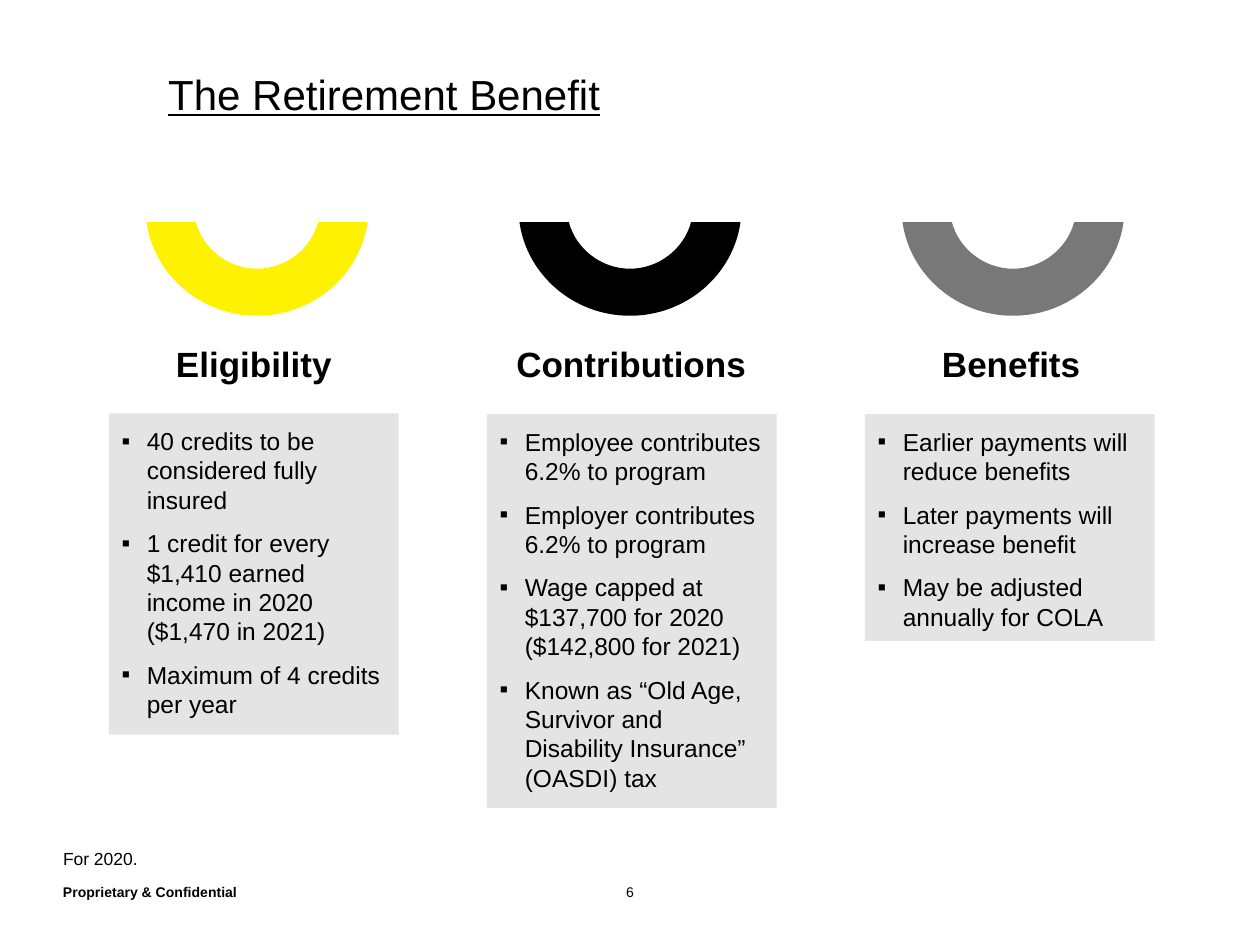
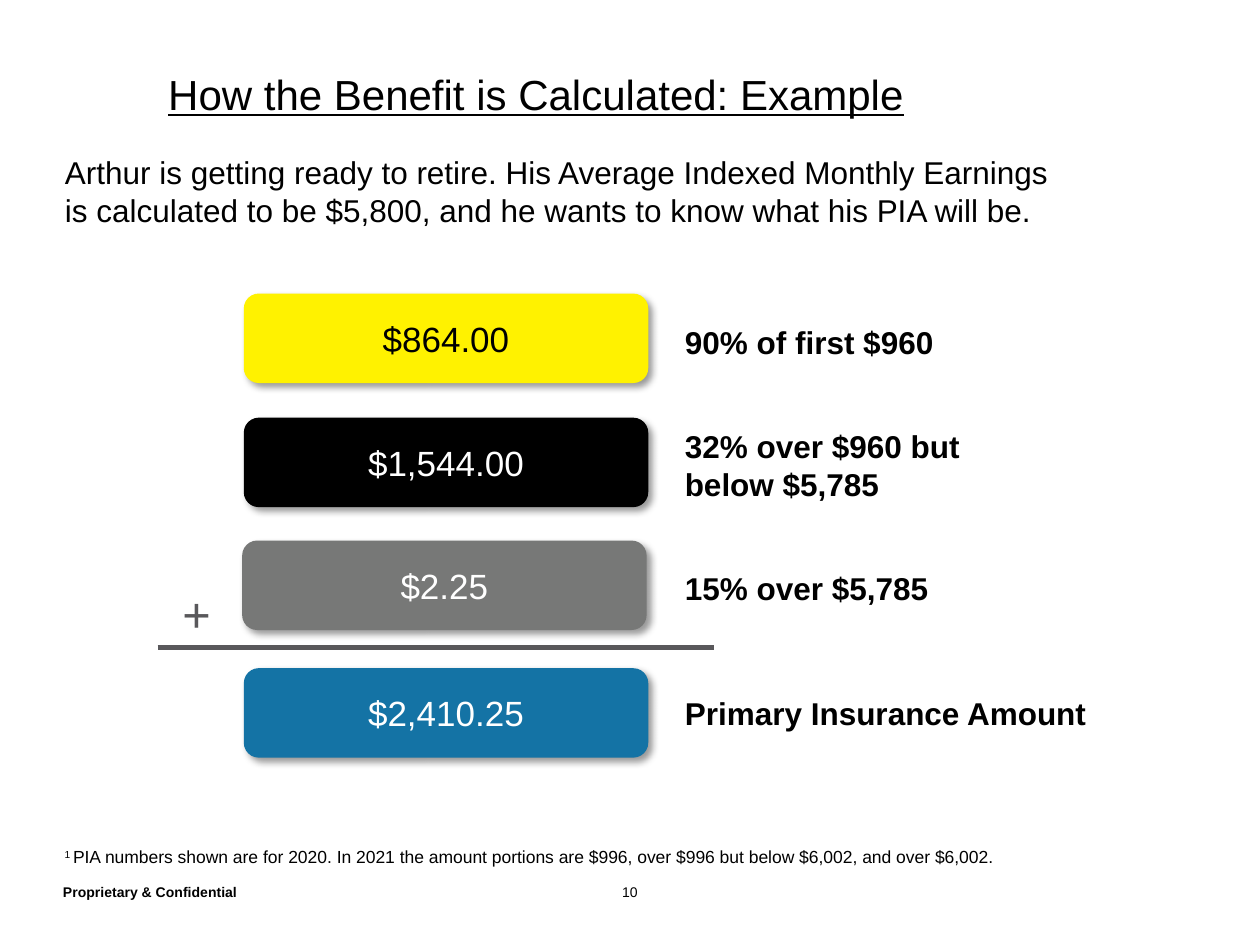
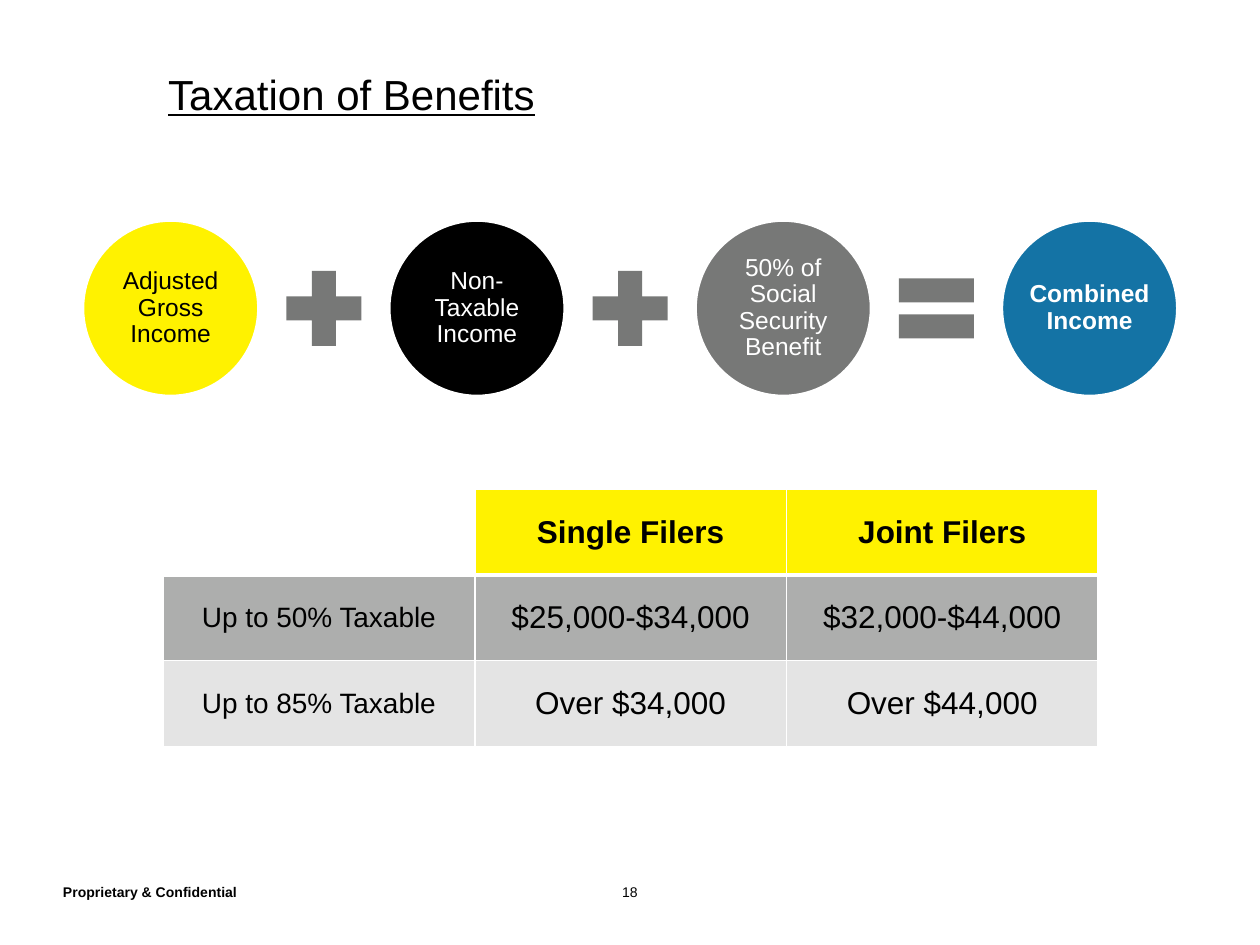
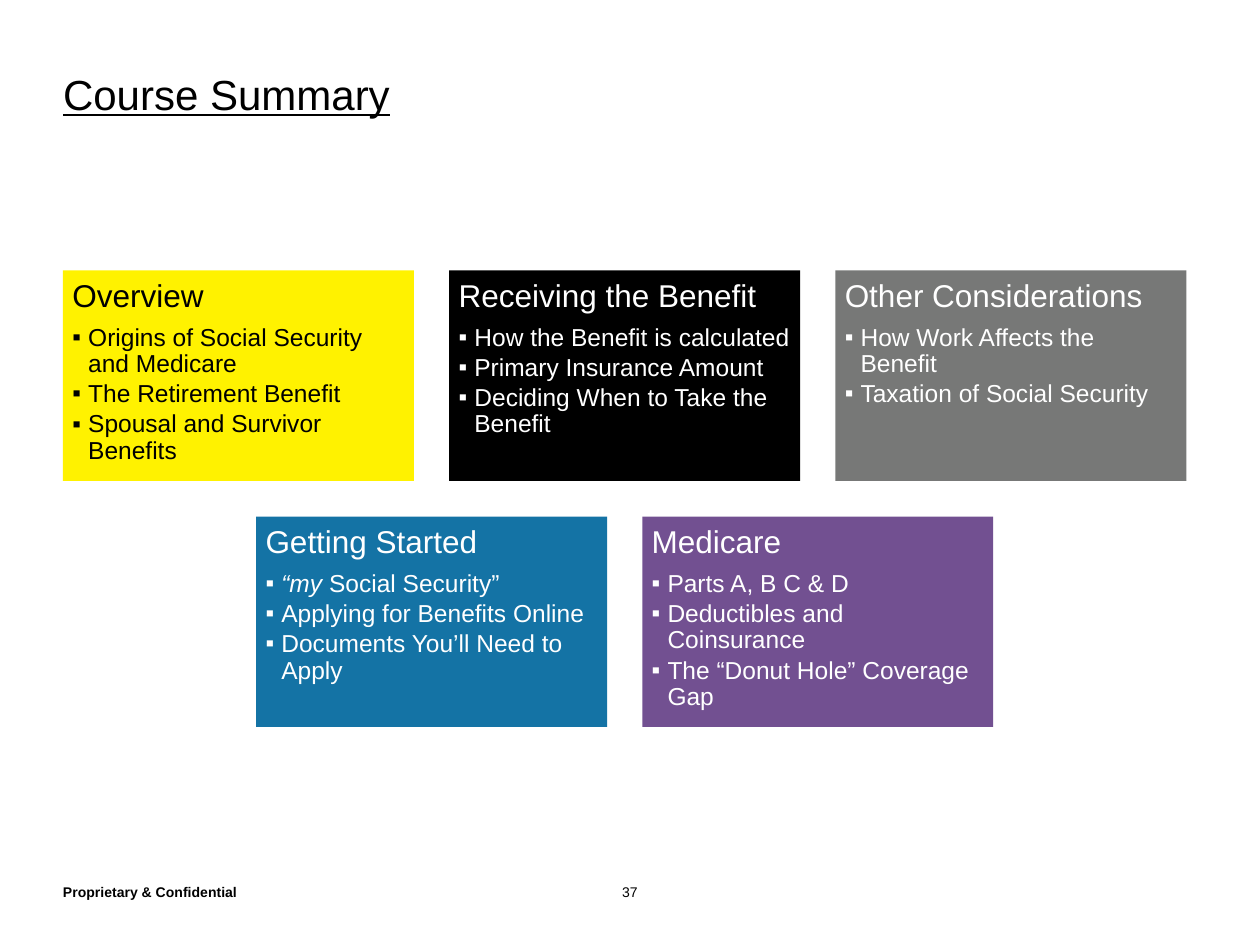
from lxml.etree import SubElement
from pptx import Presentation
from pptx.dml.color import RGBColor
from pptx.enum.shapes import MSO_CONNECTOR as Link, MSO_SHAPE as Kind
from pptx.enum.text import MSO_ANCHOR as Hold, MSO_AUTO_SIZE as Auto, PP_ALIGN as Align
from pptx.oxml.ns import qn
from pptx.util import Inches, Pt

hue = RGBColor.from_string
YELLOW, BLACK, GREY, BLUE, PLUM = "FFF200", "000000", "777877", "1473A5", "725091"
WHITE, PALE, MID, SLATE = "FFFFFF", "E4E4E4", "ADAEAD", "59585B"
INK = {YELLOW: BLACK, BLACK: WHITE, GREY: WHITE, BLUE: WHITE, PLUM: WHITE}

deck = Presentation()
deck.slide_width, deck.slide_height = Inches(10), Inches(7.5)
CELL = deck.slide_width // 100
NEW = (0, 0, 0, 0)
LOOSE = (1, 0.5)


def place(shape, spot, text="", fill=None, pad=(0, 0), hold=Hold.TOP, wrap=True):
    shape.left, shape.top, shape.width, shape.height = [round(CELL * n) for n in spot]
    shape.shadow.inherit = False
    shape.line.fill.background()
    if fill:
        shape.fill.solid()
        shape.fill.fore_color.rgb = hue(fill)
    frame = shape.text_frame
    frame.text = text
    frame.auto_size = Auto.NONE
    frame.word_wrap = wrap
    frame.vertical_anchor = hold
    frame.margin_left = frame.margin_right = round(CELL * pad[0])
    frame.margin_top = frame.margin_bottom = round(CELL * pad[1])
    return frame.paragraphs


def style(paras, size, ink=BLACK, bold=False, align=Align.LEFT, after=0, lead=1.0, dent=0):
    for para in paras:
        props = para._p.get_or_add_pPr()
        props.set("marL", str(round(CELL * dent)))
        props.set("indent", str(round(-CELL * dent)))
        if dent:
            SubElement(props, qn("a:buFont"), typeface="Arial")
            SubElement(props, qn("a:buChar"), char="▪")
        else:
            SubElement(props, qn("a:buNone"))
        para.alignment = align
        para.line_spacing = lead
        para.space_before, para.space_after = Pt(0), Pt(after)
        for run in para.runs:
            font = run.font
            font.name, font.size, font.bold = "Arial", Pt(size), bold
            font.color.rgb = hue(ink)


heads = [
    (4, 13.35, "The Retirement Benefit", "6"),
    (1, 13.35, "How the Benefit is Calculated: Example", "10"),
    (5, 13.35, "Taxation of Benefits", "18"),
    (5, 5, "Course Summary", "37"),
]
pages = []
for layout, left, title, number in heads:
    page = deck.slides.add_slide(deck.slide_layouts[layout])
    paras = place(page.shapes.title, (left, 5, 90, 9.9), title)
    style(paras, 24, lead=Pt(32))
    paras[0].runs[0].font.underline = True
    paras = place(page.shapes.add_textbox(*NEW), (5, 70.15, 81.6, 1.3),
                  "Proprietary & Confidential", hold=Hold.BOTTOM)
    style(paras, 8, bold=True)
    paras = place(page.shapes.add_textbox(*NEW), (47.4, 70.15, 5.2, 1.3), number, hold=Hold.BOTTOM)
    style(paras, 8, align=Align.CENTER)
    pages.append(page)
plan, calc, tax, recap = pages

topics = [
    (2, "Eligibility", YELLOW, 20.4, 13.6, 13.1, 32.8, 25.5, [
        "40 credits to be considered fully insured",
        "1 credit for every $1,410 earned income in 2020 ($1,470 in 2021)",
        "Maximum of 4 credits per year"]),
    (3, "Contributions", BLACK, 50, 40.8, 18.6, 32.87, 31.25, [
        "Employee contributes 6.2% to program",
        "Employer contributes 6.2% to program",
        "Wage capped at $137,700 for 2020 ($142,800 for 2021)",
        "Known as “Old Age, Survivor and Disability Insurance” (OASDI) tax"]),
    (4, "Benefits", GREY, 80.4, 74.2, 12.1, 32.87, 18, [
        "Earlier payments will reduce benefits",
        "Later payments will increase benefit",
        "May be adjusted annually for COLA"]),
]
HALF, RIM = 8.77, 17.63
KNOTS = [(0, 3.7), (-4.85, 0), (-HALF, 0), (0, 7.43), (HALF, 0), (4.85, 0), (0, 3.7)]
BENDS = {
    0: [(-2.3, 3.7), (-4.3, 2.1)],
    2: [(-8.2, 4.15), (-4.5, 7.43)],
    3: [(4.5, 7.43), (8.2, 4.15)],
    5: [(4.3, 2.1), (2.3, 3.7)],
}
for col, (slot, name, fill, mid, left, wide, top, high, items) in enumerate(topics):
    paras = place(plan.placeholders[slot], (8.65 + 30 * col, top, 23, high),
                  "\n".join(items), PALE, (1, 1))
    style(paras, 14, after=8, dent=2)
    paras = place(plan.shapes.add_textbox(*NEW), (left, 27.2, wide, 3.4), name, wrap=False)
    style(paras, 20, bold=True, align=Align.CENTER)
    spots = [(round(CELL * (mid + x)), round(CELL * (RIM + y))) for x, y in KNOTS]
    pen = plan.shapes.build_freeform(*spots[0])
    pen.add_line_segments(spots[1:])
    bowl = pen.convert_to_shape()
    sides = list(bowl._element.iter(qn("a:lnTo")))
    for side, bend in BENDS.items():
        sides[side].tag = qn("a:cubicBezTo")
        for place_at, (x, y) in enumerate(bend):
            knot = SubElement(sides[side], qn("a:pt"),
                              x=str(round(CELL * (HALF + x))), y=str(round(CELL * y)))
            sides[side].insert(place_at, knot)
    bowl.shadow.inherit = False
    bowl.fill.solid()
    bowl.fill.fore_color.rgb = hue(fill)
    bowl.line.fill.background()
style(place(plan.placeholders[1], (5, 67.3, 57.7, 1.9), "For 2020."), 10, lead=Pt(12))

story = ("Arthur is getting ready to retire. His Average Indexed Monthly Earnings\n"
         "is calculated to be $5,800, and he wants to know what his PIA will be.")
style(place(calc.placeholders[1], (4.15, 11.65, 84.6, 7.1), story, pad=LOOSE, wrap=False), 18)
sums = [
    ("$864.00", YELLOW, 19.35, 23.3, "90% of first $960", 25.15, 21.9, 4),
    ("$1,544.00", BLACK, 19.35, 33.15, "32% over $960 but\nbelow $5,785", 33.4, 24, 7.1),
    ("$2.25", GREY, 19.22, 42.9, "15% over $5,785", 44.7, 21.5, 4),
    ("$2,410.25", BLUE, 19.35, 53.03, "Primary Insurance Amount", 54.6, 34.2, 4),
]
for amount, fill, left, top, label, row, wide, high in sums:
    bar = calc.shapes.add_shape(Kind.ROUNDED_RECTANGLE, *NEW)
    paras = place(bar, (left, top, 32.1, 7.1), amount, fill, LOOSE, Hold.MIDDLE)
    style(paras, 20, INK[fill], align=Align.CENTER)
    glow = SubElement(bar._element.spPr.find(qn("a:effectLst")), qn("a:outerShdw"),
                      blurRad=str(Pt(4)), dist=str(Pt(3)), dir="2700000",
                      algn="tl", rotWithShape="0")
    tone = SubElement(glow, qn("a:srgbClr"), val=BLACK)
    SubElement(tone, qn("a:alpha"), val="40000")
    paras = place(calc.shapes.add_textbox(*NEW), (53.37, row, wide, high), label,
                  pad=LOOSE, wrap=False)
    style(paras, 18, bold=True)
paras = place(calc.shapes.add_textbox(*NEW), (13.3, 43.23, 4.6, 6.4), "+",
              pad=LOOSE, hold=Hold.MIDDLE, wrap=False)
style(paras, 48, SLATE, align=Align.CENTER)
paras[0].runs[0]._r.get_or_add_rPr().set("baseline", "-25000")
rule = calc.shapes.add_connector(
    Link.STRAIGHT, *[round(CELL * n) for n in (12.5, 51.4, 56.7, 51.4)])
rule.line.color.rgb = hue(SLATE)
rule.line.width = Pt(3)
SubElement(rule._element.spPr, qn("a:effectLst"))
paras = place(calc.shapes.add_textbox(*NEW), (4.15, 66.65, 82.5, 2.7), "1 ", pad=LOOSE)
paras[0].add_run().text = ("PIA numbers shown are for 2020. In 2021 the amount portions are $996, "
                           "over $996 but below $6,002, and over $6,002.")
style(paras, 10)
paras[0].runs[0]._r.get_or_add_rPr().set("baseline", "30000")

terms = [
    ("Adjusted Gross Income", YELLOW, Kind.MATH_PLUS),
    ("Non-Taxable Income", BLACK, Kind.MATH_PLUS),
    ("50% of Social Security Benefit", GREY, Kind.MATH_EQUAL),
    ("Combined Income", BLUE, None),
]
for col, (term, fill, sign) in enumerate(terms):
    left = 6.55 + 24.31 * col
    disc = tax.shapes.add_shape(Kind.OVAL, *NEW)
    paras = place(disc, (left, 17.47, 14, 14), term, fill, hold=Hold.MIDDLE)
    style(paras, 14, INK[fill], bold=sign is None, align=Align.CENTER, lead=0.9)
    disc.line.color.rgb = hue(WHITE)
    disc.line.width = Pt(2)
    if sign:
        place(tax.shapes.add_shape(sign, *NEW), (left + 15.1, 20.42, 8.1, 8.1), fill=GREY)

rows = [
    (YELLOW, ["", "Single Filers", "Joint Filers"]),
    (MID, ["Up to 50% Taxable", "$25,000-$34,000", "$32,000-$44,000"]),
    (PALE, ["Up to 85% Taxable", "Over $34,000", "Over $44,000"]),
]
grid = tax.shapes.add_table(3, 3, *[round(CELL * n) for n in (12.95, 38.83, 74.2, 20.4)]).table
for row, (fill, texts) in enumerate(rows):
    for col, text in enumerate(texts):
        cell = grid.cell(row, col)
        cell.text = text
        cell.vertical_anchor = Hold.MIDDLE
        style(cell.text_frame.paragraphs, 16 if col == 0 else 18,
              bold=row == 0, align=Align.CENTER)
        props = cell._tc.get_or_add_tcPr()
        for side in ("L", "R", "T", "B"):
            thick = (row, side) in ((0, "B"), (1, "T"))
            edge = SubElement(props, qn("a:ln" + side), w=str(Pt(3 if thick else 1)))
            SubElement(SubElement(edge, qn("a:solidFill")), qn("a:srgbClr"), val=WHITE)
        if text:
            cell.fill.solid()
            cell.fill.fore_color.rgb = hue(fill)
        else:
            cell.fill.background()

cards = [
    (0, 0, YELLOW, ["Overview", "Origins of Social Security and Medicare",
                    "The Retirement Benefit", "Spousal and Survivor Benefits"]),
    (1, 0, BLACK, ["Receiving the Benefit", "How the Benefit is calculated",
                   "Primary Insurance Amount", "Deciding When to Take the Benefit"]),
    (2, 0, GREY, ["Other Considerations", "How Work Affects the Benefit",
                  "Taxation of Social Security"]),
    (0.5, 1, BLUE, ["Getting Started", "“my ", "Applying for Benefits Online",
                    "Documents You’ll Need to Apply"]),
    (1.5, 1, PLUM, ["Medicare", "Parts A, B C & D", "Deductibles and Coinsurance",
                    "The “Donut Hole” Coverage Gap"]),
]
for col, row, fill, lines in cards:
    card = recap.shapes.add_shape(Kind.RECTANGLE, *NEW)
    spot = (5 + 30.65 * col, 21.47 + 19.53 * row, 27.86, 16.7)
    head, *items = place(card, spot, "\n".join(lines), fill, (0.75, 0.75))
    if fill == BLUE:
        items[0].add_run().text = "Social Security”"
        items[0].runs[0].font.italic = True
    style([head], 18, INK[fill], after=6.3, lead=0.9)
    style(items, 14, INK[fill], after=2.1, lead=0.9, dent=1.25)

deck.save("out.pptx")
